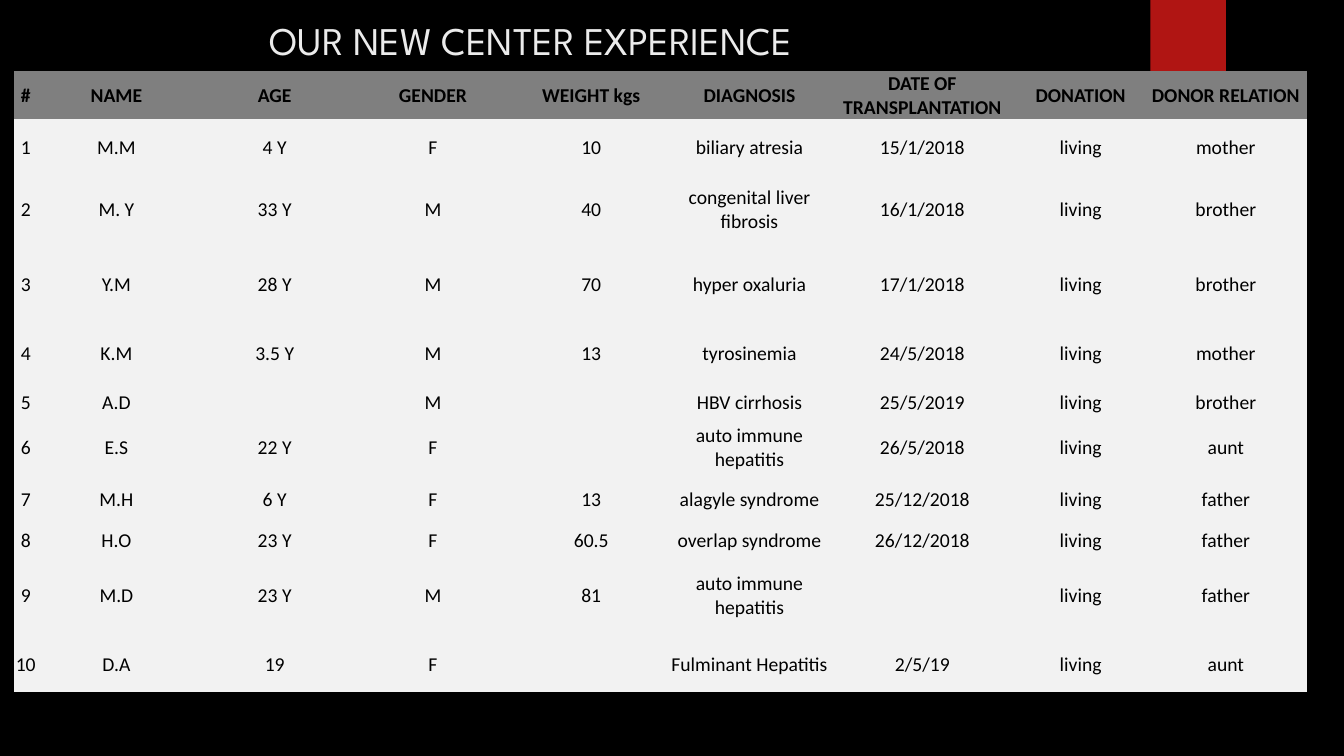
from dataclasses import dataclass

from pptx import Presentation
from pptx.dml.color import RGBColor
from pptx.enum.shapes import MSO_SHAPE
from pptx.enum.text import MSO_ANCHOR, PP_ALIGN
from pptx.util import Inches, Pt

RECTANGLE = MSO_SHAPE.RECTANGLE
MIDDLE = MSO_ANCHOR.MIDDLE
CENTER = PP_ALIGN.CENTER
NO_STYLE_NO_GRID = "{2D5ABB26-0587-4C30-8999-92F81FD0307C}"


@dataclass(frozen=True)
class Theme:
    """Colours, fonts and type sizes of the slide."""
    background: RGBColor = RGBColor.from_string("000000")
    ribbon: RGBColor = RGBColor.from_string("B01513")
    title_text: RGBColor = RGBColor.from_string("EBEBEB")
    header_fill: RGBColor = RGBColor.from_string("7F7F7F")
    body_fill: RGBColor = RGBColor.from_string("F2F2F2")
    table_text: RGBColor = RGBColor.from_string("000000")
    title_font: str = "League Spartan"
    table_font: str = "Calibri"
    title_size: int = 28
    table_size: int = 14


THEME = Theme()

COLUMN_WIDTHS = [0.23] + [1.57] * 5 + [1.86, 1.28, 1.6]
ROW_HEIGHTS = [0.41, 0.55, 0.68, 0.82, 0.55, 0.41, 0.41, 0.55, 0.27, 0.82, 0.55]
CELL_FORMAT = {
    "margin_left": Inches(0.01),
    "margin_right": Inches(0.01),
    "margin_top": Inches(0.01),
    "margin_bottom": 0,
    "vertical_anchor": MIDDLE,
}

HEADINGS = ["#", "NAME", "AGE", "GENDER", "WEIGHT kgs", "DIAGNOSIS",
            "DATE OF TRANSPLANTATION", "DONATION", "DONOR RELATION"]
PATIENTS = [
    ("M.M", "4 Y", "F", "10", "biliary atresia", "15/1/2018", "mother"),
    ("M. Y", "33 Y", "M", "40", "congenital liver fibrosis", "16/1/2018", "brother"),
    ("Y.M", "28 Y", "M", "70", "hyper oxaluria", "17/1/2018", "brother"),
    ("K.M", "3.5 Y", "M", "13", "tyrosinemia", "24/5/2018", "mother"),
    ("A.D", "", "M", "", "HBV cirrhosis", "25/5/2019", "brother"),
    ("E.S", "22 Y", "F", "", "auto immune hepatitis", "26/5/2018", "aunt"),
    ("M.H", "6 Y", "F", "13", "alagyle syndrome", "25/12/2018", "father"),
    ("H.O", "23 Y", "F", "60.5", "overlap syndrome", "26/12/2018", "father"),
    ("M.D", "23 Y", "M", "81", "auto immune hepatitis", "", "father"),
    ("D.A", "19", "F", "", "Fulminant Hepatitis", "2/5/19", "aunt"),
]


def write_centered(para, text, font_format, color):
    """Put centred, formatted text in a paragraph."""
    para.text = text
    para.alignment = CENTER
    for name, value in font_format.items():
        setattr(para.font, name, value)
    para.font.color.rgb = color


def add_ribbon(page, left, top, width, height):
    """Draw the red ribbon hanging from the top edge."""
    ribbon = page.shapes.add_shape(
        RECTANGLE, Inches(left), Inches(top), Inches(width), Inches(height))
    ribbon.shadow.inherit = False
    ribbon.fill.solid()
    ribbon.fill.fore_color.rgb = THEME.ribbon
    ribbon.line.fill.background()


def add_patient_table(page, left, top):
    """Draw the table of transplanted patients."""
    rows = [HEADINGS]
    for number, (*details, relation) in enumerate(PATIENTS, start=1):
        rows.append([str(number), *details, "living", relation])
    frame = page.shapes.add_table(
        len(rows), len(HEADINGS), Inches(left), Inches(top),
        Inches(sum(COLUMN_WIDTHS)), Inches(sum(ROW_HEIGHTS)))
    frame.element.xpath(".//a:tableStyleId")[0].text = NO_STYLE_NO_GRID
    table = frame.table
    table.horz_banding = False
    for column, width in zip(table.columns, COLUMN_WIDTHS):
        column.width = Inches(width)
    for row_index, (row, height) in enumerate(zip(table.rows, ROW_HEIGHTS)):
        row.height = Inches(height)
        is_header = row_index == 0
        font_format = {"name": THEME.table_font, "size": Pt(THEME.table_size),
                       "bold": is_header}
        for cell, text in zip(row.cells, rows[row_index]):
            for name, value in CELL_FORMAT.items():
                setattr(cell, name, value)
            cell.fill.solid()
            cell.fill.fore_color.rgb = THEME.header_fill if is_header else THEME.body_fill
            write_centered(cell.text_frame.paragraphs[0], text, font_format, THEME.table_text)


def add_title(page, left, top, width, height):
    """Write the slide title."""
    box = page.shapes.add_textbox(Inches(left), Inches(top), Inches(width), Inches(height))
    box.text_frame.word_wrap = True
    font_format = {"name": THEME.title_font, "size": Pt(THEME.title_size)}
    write_centered(box.text_frame.paragraphs[0], "OUR NEW CENTER EXPERIENCE",
                   font_format, THEME.title_text)


def main():
    """Build the slide and save the deck."""
    deck = Presentation()
    deck.slide_width, deck.slide_height = Inches(13.33), Inches(7.5)
    page = deck.slides.add_slide(deck.slide_layouts[6])
    page.background.fill.solid()
    page.background.fill.fore_color.rgb = THEME.background
    add_ribbon(page, 11.41, 0, 0.75, 1.25)
    add_patient_table(page, 0.14, 0.7)
    add_title(page, 0.2, 0.11, 10.13, 0.54)
    deck.save("out.pptx")


if __name__ == "__main__":
    main()
